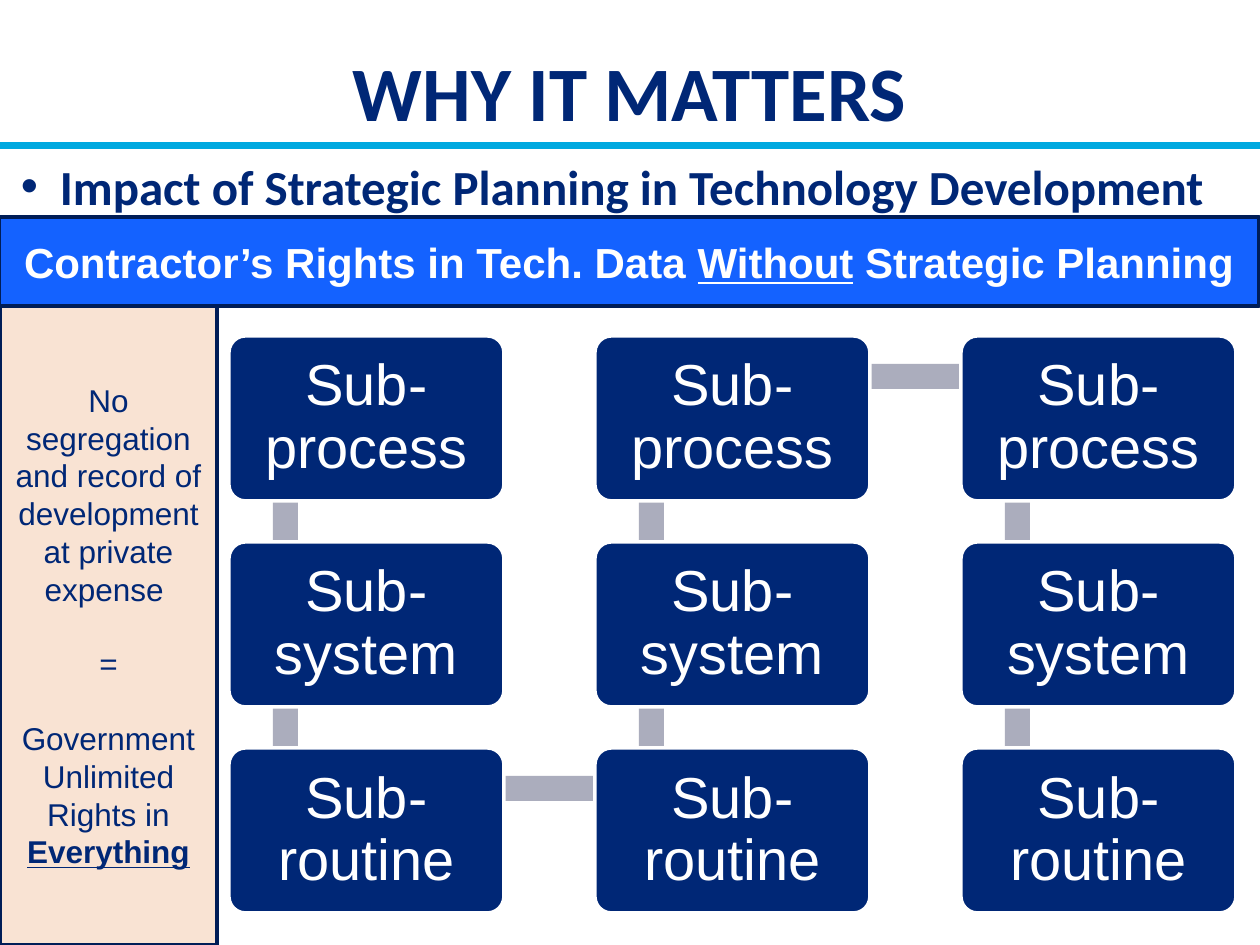
from lxml.etree import SubElement
from pptx import Presentation
from pptx.dml.color import RGBColor
from pptx.enum.shapes import MSO_CONNECTOR as Connector, MSO_SHAPE as Shape
from pptx.enum.text import MSO_ANCHOR as Anchor, MSO_AUTO_SIZE as AutoSize, PP_ALIGN as Align
from pptx.oxml.ns import qn
from pptx.util import Pt

EMU_PER_PX = 914400 / 126
NAVY, DARK, BLUE, CYAN = "002776", "001D57", "1462FF", "00A9E0"
GREY, PEACH, WHITE = "ABADBD", "F9E3D3", "FFFFFF"


def px(value):
    return round(value * EMU_PER_PX)


def color(value):
    return RGBColor.from_string(value)


class SlideBuilder:
    heading_font, body_font = "Calibri", "Arial"

    def __init__(self, slide):
        self.slide = slide

    def frame(self, shape, insets, anchor):
        frame = shape.text_frame
        frame.word_wrap = True
        frame.auto_size = AutoSize.NONE
        frame.vertical_anchor = anchor
        frame.margin_left, frame.margin_top, frame.margin_right, frame.margin_bottom = map(px, insets)
        return frame

    def run(self, paragraph, text, size, fill, font=None, bold=False, underline=False):
        run = paragraph.add_run()
        run.text = text
        run.font.name = font or self.body_font
        run.font.size = Pt(size)
        run.font.bold = bold
        run.font.underline = underline
        run.font.color.rgb = color(fill)

    def title(self, box, text):
        shape = self.slide.shapes.title
        shape.left, shape.top, shape.width, shape.height = map(px, box)
        paragraph = self.frame(shape, (0, 6, 0, 6), Anchor.BOTTOM).paragraphs[0]
        paragraph.alignment = Align.CENTER
        self.run(paragraph, text, 44, NAVY, self.heading_font, bold=True)

    def bullet(self, box, text, indent):
        shape = self.slide.shapes.add_textbox(*map(px, box))
        paragraph = self.frame(shape, (0, 4, 0, 0), Anchor.TOP).paragraphs[0]
        properties = paragraph._p.get_or_add_pPr()
        properties.set("marL", str(px(indent)))
        properties.set("indent", str(-px(indent)))
        SubElement(properties, qn("a:buFont"), typeface="Arial")
        SubElement(properties, qn("a:buChar"), char="•")
        self.run(paragraph, text, 28, NAVY, self.heading_font, bold=True)

    def rule(self, start, end, fill, width):
        line = self.slide.shapes.add_connector(Connector.STRAIGHT, *map(px, start + end))
        line.line.color.rgb = color(fill)
        line.line.width = Pt(width)
        SubElement(line._element.spPr, qn("a:effectLst"))

    def box(self, box, fill, outline=None, kind=Shape.RECTANGLE):
        shape = self.slide.shapes.add_shape(kind, *map(px, box))
        shape.shadow.inherit = False
        shape.fill.solid()
        shape.fill.fore_color.rgb = color(fill)
        if outline:
            shape.line.color.rgb = color(outline)
            shape.line.width = Pt(2)
        else:
            shape.line.fill.background()
        return shape

    def panel(self, box, fill, paragraphs, size, text_color):
        """Each paragraph is (space before, [(text, run options), ...])."""
        shape = self.box(box, fill, DARK)
        frame = self.frame(shape, (13, 6, 13, 6), Anchor.MIDDLE)
        for index, (gap, runs) in enumerate(paragraphs):
            paragraph = frame.add_paragraph() if index else frame.paragraphs[0]
            paragraph.alignment = Align.CENTER
            if gap:
                paragraph.space_before = Pt(gap)
            for text, options in runs:
                self.run(paragraph, text, size, text_color, **options)

    def card(self, box, text):
        shape = self.box(box, NAVY, WHITE, Shape.ROUNDED_RECTANGLE)
        shape.adjustments[0] = 0.1
        paragraph = self.frame(shape, (23, 23, 23, 23), Anchor.MIDDLE).paragraphs[0]
        paragraph.alignment = Align.CENTER
        paragraph.line_spacing = 0.9
        self.run(paragraph, text, 33, WHITE)


def main():
    presentation = Presentation()
    presentation.slide_width, presentation.slide_height = px(1260), px(945)
    builder = SlideBuilder(presentation.slides.add_slide(presentation.slide_layouts[5]))

    # Heading
    builder.rule((0, 146), (1260, 146), CYAN, 4)
    builder.title((63, 18, 1134, 125), "WHY IT MATTERS")
    builder.bullet((21, 152, 1216, 685), "Impact of Strategic Planning in Technology Development", 39)

    # Grid of cards, joined by bars that snake from column to column
    names = ("Sub-process", "Sub-system", "Sub-routine")
    columns = [229 + 366 * column for column in range(3)]
    rows = [336 + 206 * row for row in range(3)]
    for left in columns:
        for top in rows[:-1]:
            builder.box((left + 44, top + 41, 25, 206), GREY)
    for left, top in ((columns[0], rows[2]), (columns[1], rows[0])):
        builder.box((left + 57, top + 28, 364, 25), GREY)
    for left in columns:
        for top, name in zip(rows, names):
            builder.card((left, top, 275, 165), name)

    # Banner and side panel
    strong = {"bold": True}
    stressed = {"bold": True, "underline": True}
    builder.panel((-1, 217, 1260, 89), BLUE, [
        (0, [("Contractor’s Rights in Tech. Data ", strong), ("Without", stressed),
             (" Strategic Planning", strong)]),
    ], 24, WHITE)
    builder.panel((0, 306, 217, 639), PEACH, [
        (0, [("No segregation and record of development at private expense ", {})]),
        (21, [("=", {})]),
        (21, [("Government Unlimited Rights in", {})]),
        (0, [("Everything", stressed)]),
    ], 18, NAVY)

    presentation.save("out.pptx")


if __name__ == "__main__":
    main()
